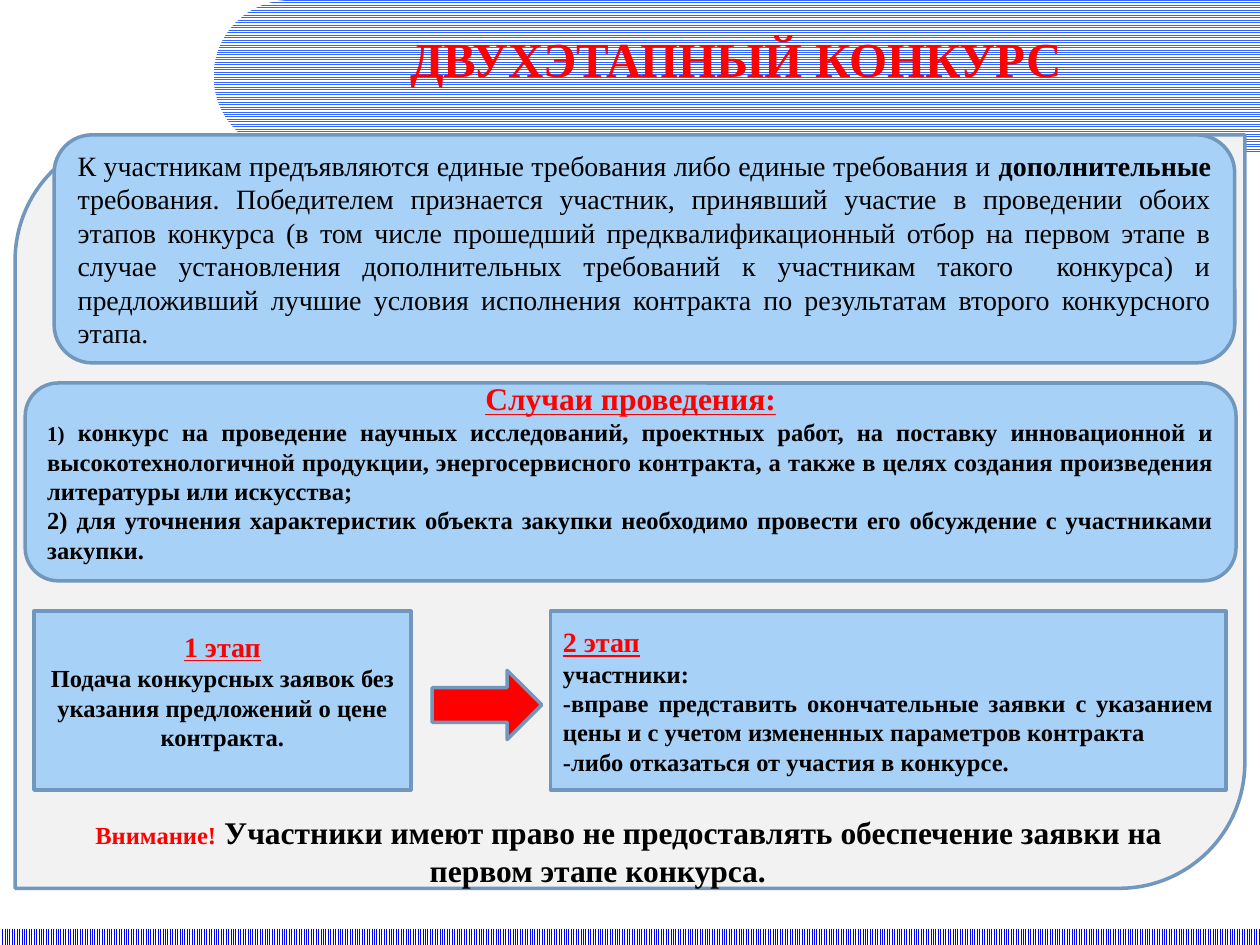
from math import cos, pi, sin

from pptx import Presentation
from pptx.dml.color import RGBColor
from pptx.enum.dml import MSO_PATTERN
from pptx.enum.shapes import MSO_SHAPE
from pptx.enum.text import MSO_ANCHOR, MSO_AUTO_SIZE, PP_ALIGN
from pptx.util import Inches, Pt

FONT = "Times New Roman"
WHITE = RGBColor(0xFF, 0xFF, 0xFF)
BLACK = RGBColor(0, 0, 0)
RED = RGBColor(0xFF, 0, 0)
BLUE = RGBColor(0, 0, 0xFF)
BAND_BLUE = RGBColor(0x33, 0x66, 0xFF)
PANEL_GREY = RGBColor(0xF2, 0xF2, 0xF2)
CARD_BLUE = RGBColor(0xA7, 0xD1, 0xF7)
OUTLINE = RGBColor(0x71, 0x97, 0xBD)
CENTER, JUSTIFY = PP_ALIGN.CENTER, PP_ALIGN.JUSTIFY

HEADING = {"size": Pt(16), "bold": True, "underline": True, "color": RED}
BIG_HEADING = {**HEADING, "size": Pt(18)}
PLAIN = {"size": Pt(16), "color": BLACK}
BOLD = {"size": Pt(14), "bold": True, "color": BLACK}


def write(shape, paragraphs):
    """Fill a shape with (alignment, [(text, format), ...]) paragraphs."""
    frame = shape.text_frame
    frame.word_wrap = True
    frame.auto_size = MSO_AUTO_SIZE.NONE
    frame.vertical_anchor = MSO_ANCHOR.MIDDLE
    for index, (alignment, spans) in enumerate(paragraphs):
        para = frame.add_paragraph() if index else frame.paragraphs[0]
        para.alignment = alignment
        for text, look in spans:
            span = para.add_run()
            span.text = text
            span.font.name = FONT
            for name, value in look.items():
                if name == "color":
                    span.font.color.rgb = value
                else:
                    setattr(span.font, name, value)


def add_outlined(kind, place, color):
    shape = page.shapes.add_shape(kind, *map(Inches, place))
    shape.shadow.inherit = False
    shape.fill.solid()
    shape.fill.fore_color.rgb = color
    shape.line.color.rgb = OUTLINE
    shape.line.width = Pt(2)
    return shape


deck = Presentation()
deck.slide_width, deck.slide_height = Inches(10), Inches(7.5)
page = deck.slides.add_slide(deck.slide_layouts[5])

# Striped header band with a half-round left end, and striped footer
radius, steps = 0.605, 48
arc = [(2.3 - radius * sin(pi * step / steps), radius - radius * cos(pi * step / steps))
       for step in range(steps + 1)]
outline = page.shapes.build_freeform(Inches(10), 0)
outline.add_line_segments([(Inches(x), Inches(y)) for x, y in arc + [(10, 2 * radius)]])
header = outline.convert_to_shape()
footer = page.shapes.add_shape(MSO_SHAPE.RECTANGLE, 0, Inches(7.37), Inches(10), Inches(0.13))
for band, pattern, color in (
    (header, MSO_PATTERN.NARROW_HORIZONTAL, BAND_BLUE),
    (footer, MSO_PATTERN.NARROW_VERTICAL, BLUE),
):
    band.shadow.inherit = False
    band.line.fill.background()
    band.fill.patterned()
    band.fill.pattern = pattern
    band.fill.fore_color.rgb = color
    band.fill.back_color.rgb = WHITE

# Title, brought in front of the header band
title = page.shapes.title
title.left, title.top, title.width, title.height = map(Inches, (2.09, 0.16, 7.5, 0.6))
footer.element.addnext(title.element)
write(title, [(CENTER, [("ДВУХЭТАПНЫЙ КОНКУРС", {"size": Pt(28), "bold": True, "color": RED})])])

add_outlined(MSO_SHAPE.ROUND_2_DIAG_RECTANGLE, (0.12, 1.07, 9.76, 5.98), PANEL_GREY)

# Cards: shape, place, top inset, bottom inset, paragraphs
cards = [
    (MSO_SHAPE.ROUNDED_RECTANGLE, (0.43, 1.07, 9.37, 1.81), 0.05, 0.05, [
        (JUSTIFY, [
            ("К участникам предъявляются единые требования либо единые требования и ", PLAIN),
            ("дополнительные", {**PLAIN, "bold": True}),
            (" требования. Победителем признается участник, принявший участие в проведении "
             "обоих этапов конкурса (в том числе прошедший предквалификационный отбор на "
             "первом этапе в случае установления дополнительных требований к участникам "
             "такого  конкурса) и предложивший лучшие условия исполнения контракта по "
             "результатам второго конкурсного этапа.", PLAIN),
        ]),
    ]),
    (MSO_SHAPE.ROUNDED_RECTANGLE, (0.2, 3.04, 9.61, 1.57), 0, 0.16, [
        (CENTER, [("Случаи проведения:", BIG_HEADING)]),
        (JUSTIFY, [
            ("1)", {**BOLD, "size": Pt(12)}),
            (" конкурс на проведение научных исследований, проектных работ, на поставку "
             "инновационной и высокотехнологичной продукции, энергосервисного контракта, "
             "а также в целях создания произведения литературы или искусства;", BOLD),
        ]),
        (JUSTIFY, [("2) для уточнения характеристик объекта закупки необходимо провести его "
                    "обсуждение с участниками закупки.", BOLD)]),
    ]),
    (MSO_SHAPE.RECTANGLE, (0.27, 4.85, 2.99, 1.42), 0.05, 0.21, [
        (CENTER, [("1 этап", HEADING)]),
        (CENTER, [("Подача конкурсных заявок без указания предложений о цене контракта.", BOLD)]),
    ]),
    (MSO_SHAPE.RECTANGLE, (4.37, 4.85, 5.36, 1.42), 0.05, 0.05, [
        (JUSTIFY, [("2 этап", HEADING)]),
        (JUSTIFY, [("участники:", BOLD)]),
        (JUSTIFY, [("-вправе представить окончательные заявки с указанием цены и с учетом "
                    "измененных параметров контракта", BOLD)]),
        (JUSTIFY, [("-либо отказаться от участия в конкурсе.", BOLD)]),
    ]),
]
for kind, place, top, bottom, paragraphs in cards:
    card = add_outlined(kind, place, CARD_BLUE)
    card.text_frame.margin_top = Inches(top)
    card.text_frame.margin_bottom = Inches(bottom)
    write(card, paragraphs)

add_outlined(MSO_SHAPE.RIGHT_ARROW, (3.43, 5.32, 0.87, 0.55), RED)

# Closing remark with a first-line indent
remark = page.shapes.add_textbox(*map(Inches, (0.15, 6.4, 9.19, 0.71)))
write(remark, [(CENTER, [
    ("Внимание!", {**BOLD, "color": RED}),
    (" ", {"size": Pt(18)}),
    ("Участники имеют право не предоставлять обеспечение заявки на первом этапе конкурса.",
     {**BOLD, "size": Pt(18)}),
])])
indent = remark.text_frame.paragraphs[0]._p.get_or_add_pPr()
indent.set("marL", "0")
indent.set("indent", str(Inches(0.49)))

deck.save("out.pptx")
